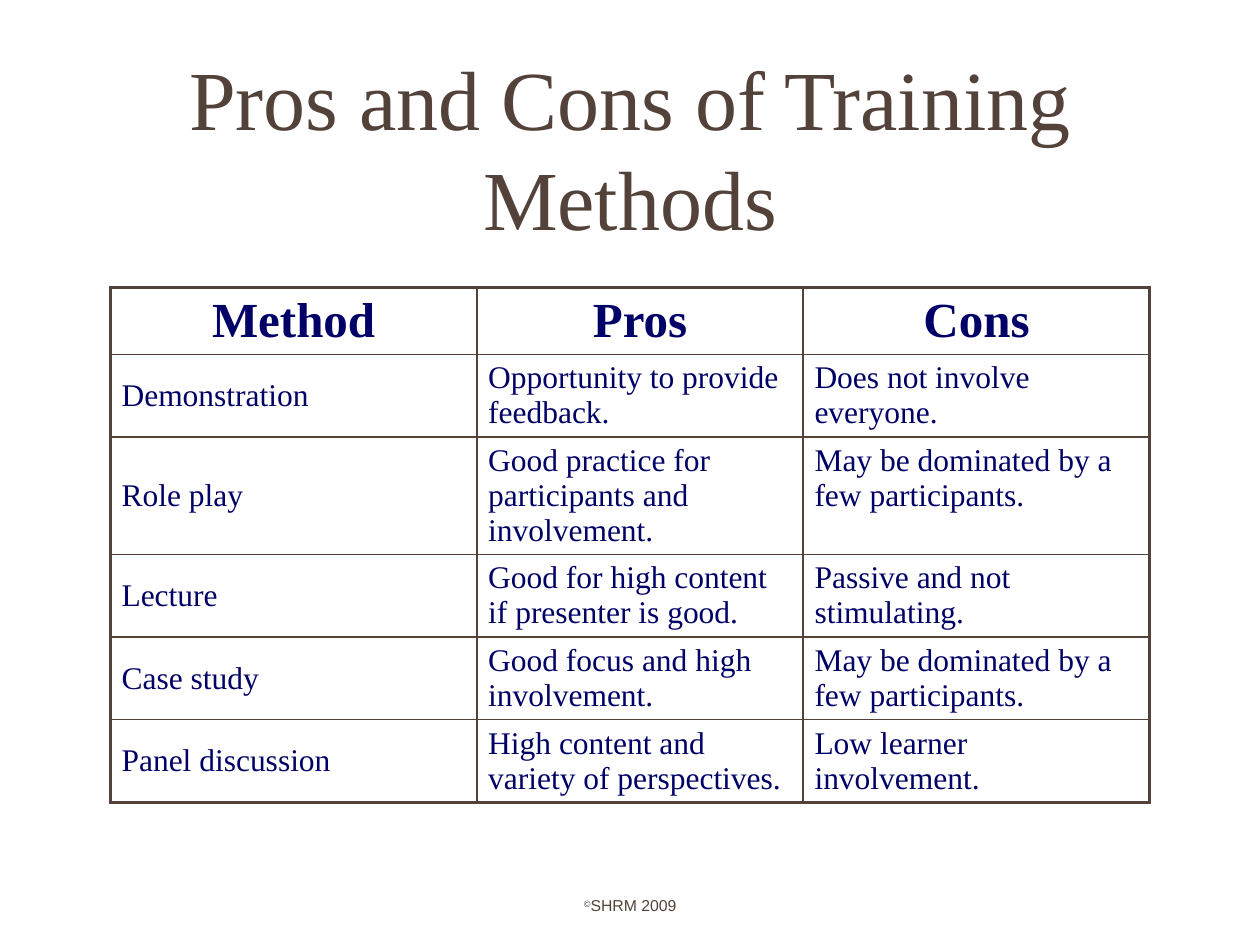
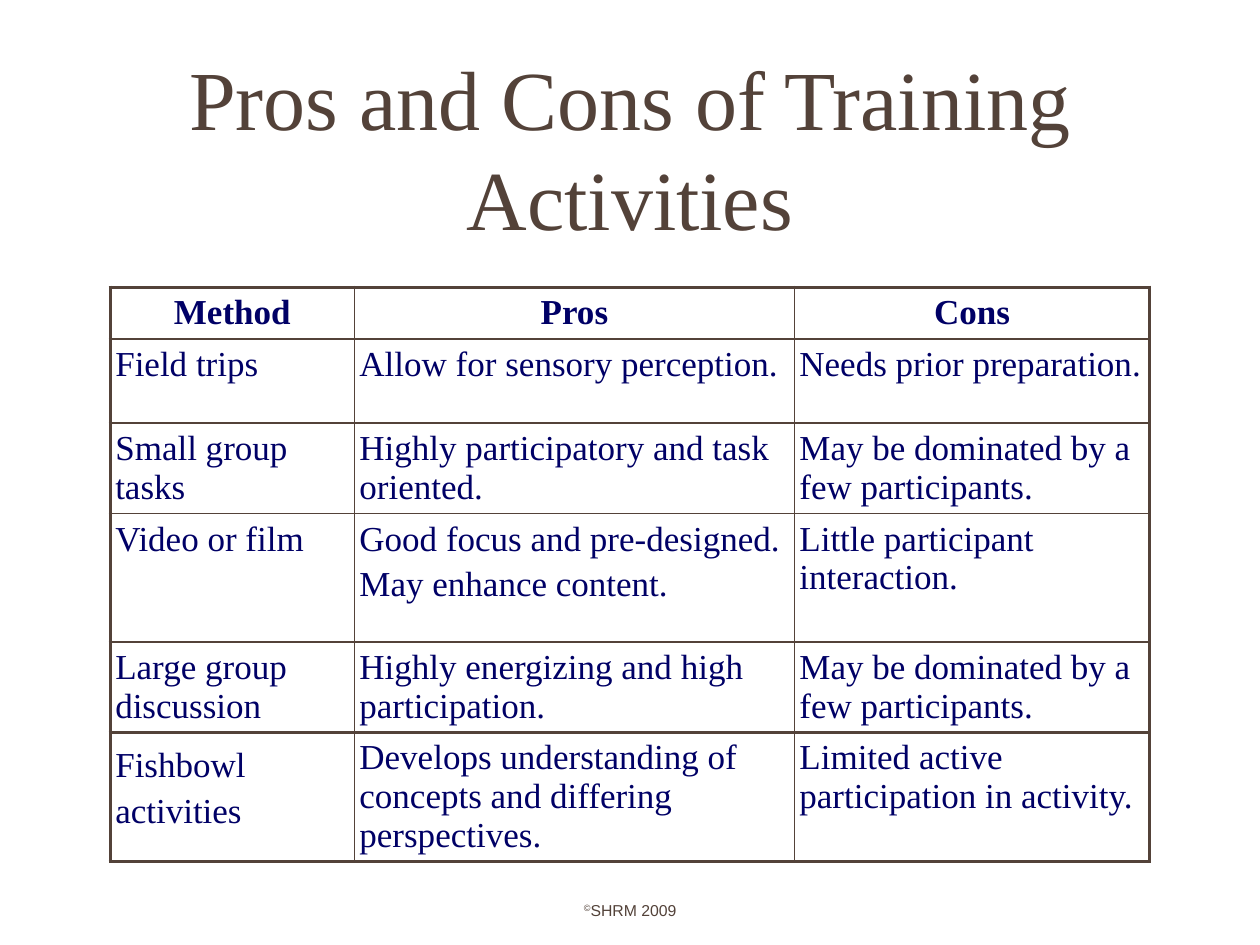
from dataclasses import dataclass

from lxml import etree
from pptx import Presentation
from pptx.dml.color import RGBColor
from pptx.enum.text import MSO_ANCHOR, PP_ALIGN
from pptx.oxml.ns import qn
from pptx.util import Inches, Pt

LEFT, CENTER = PP_ALIGN.LEFT, PP_ALIGN.CENTER
TOP, MIDDLE = MSO_ANCHOR.TOP, MSO_ANCHOR.MIDDLE


@dataclass(frozen=True)
class Theme:
    """Colours, fonts, sizes and line widths shared by the slides."""

    brown: str = "534239"
    navy: str = "000066"
    serif: str = "Times New Roman"
    sans: str = "Arial"
    title_size: int = 48
    footer_size: int = 9
    title_leading: float = 1.19
    table_leading: float = 1.11
    loose_leading: float = 1.32
    heavy_line: float = 2.25
    thin_line: float = 1
    paragraph_gap: float = 0.2


THEME = Theme()
SLIDE_WIDTH, SLIDE_HEIGHT = Inches(10), Inches(7.5)
GRID_COLUMNS, GRID_ROWS = 40, 30
CONTENT_LEFT, CONTENT_WIDTH = 3.5, 33
TABLE_TOP = 9.12
HEADINGS = ("Method", "Pros", "Cons")
DOMINATED = "May be dominated by a few participants."

METHODS = {
    "title": "Pros and Cons of Training Methods",
    "column_widths": (11.64, 10.36, 11),
    "row_heights": (2.1, 2.6, 3.72, 2.6, 2.6, 2.6),
    "rows": (
        HEADINGS,
        ("Demonstration", "Opportunity to provide feedback.", "Does not involve everyone."),
        ("Role play", "Good practice for participants and involvement.", DOMINATED),
        ("Lecture", "Good for high content if presenter is good.", "Passive and not stimulating."),
        ("Case study", "Good focus and high involvement.", DOMINATED),
        ("Panel discussion", "High content and variety of perspectives.", "Low learner involvement."),
    ),
    "heading_size": 28,
    "body_size": 18,
    "side_margin": 0.09,
    "method_anchor": MIDDLE,
    "footer_top": 28.25,
}

ACTIVITIES = {
    "title": "Pros and Cons of Training Activities",
    "column_widths": (7.75, 13.97, 11.28),
    "row_heights": (1.6, 2.68, 2.86, 4.08, 2.86, 4.08),
    "rows": (
        HEADINGS,
        ("Field trips", "Allow for sensory perception.", "Needs prior preparation."),
        ("Small group tasks", "Highly participatory and task oriented.", DOMINATED),
        ("Video or film", "Good focus and pre-designed.\nMay enhance content.",
         "Little participant interaction."),
        ("Large group discussion", "Highly energizing and high participation.", DOMINATED),
        ("Fishbowl activities", "Develops understanding of concepts and differing perspectives.",
         "Limited active participation in activity."),
    ),
    "heading_size": 20,
    "body_size": 20,
    "side_margin": 0.04,
    "method_anchor": TOP,
    "footer_top": 28.4,
    "heavy_rule": 5,
    "loose_cell": (5, 0),
}


def across(columns):
    """Turn grid columns into a length."""
    return round(SLIDE_WIDTH * columns / GRID_COLUMNS)


def down(rows):
    """Turn grid rows into a length."""
    return round(SLIDE_HEIGHT * rows / GRID_ROWS)


def write_text(frame, text, *, size, color, font=THEME.serif, bold=False,
               align=LEFT, leading=None, raised=""):
    """Write one paragraph per line, after an optional raised prefix."""
    for index, line in enumerate(text.split("\n")):
        paragraph = frame.add_paragraph() if index else frame.paragraphs[0]
        paragraph.alignment = align
        if index:
            paragraph.space_before = Pt(size * THEME.paragraph_gap)
        if leading:
            paragraph.line_spacing = Pt(size * leading)
        if raised:
            prefix = paragraph.add_run()
            prefix.text = raised
            prefix._r.get_or_add_rPr().set("baseline", "30000")
        paragraph.add_run().text = line
        for run in paragraph.runs:
            run.font.name = font
            run.font.size = Pt(size)
            run.font.bold = bold
            run.font.color.rgb = RGBColor.from_string(color)


def add_text_box(slide, left, top, width, height, text, anchor=TOP, **text_format):
    """Add a wrapping text box placed on the grid."""
    shape = slide.shapes.add_textbox(across(left), down(top), across(width), down(height))
    shape.text_frame.word_wrap = True
    shape.text_frame.vertical_anchor = anchor
    write_text(shape.text_frame, text, **text_format)


def add_title(slide, text):
    """Add the centred slide title."""
    add_text_box(slide, CONTENT_LEFT, 1.68, CONTENT_WIDTH, 6, text, anchor=MIDDLE,
                 size=THEME.title_size, color=THEME.brown, align=CENTER,
                 leading=THEME.title_leading)


def add_footer(slide, top):
    """Add the copyright line."""
    add_text_box(slide, 13.67, top, 12.67, 1.4, "SHRM 2009", raised="©",
                 size=THEME.footer_size, color=THEME.brown, font=THEME.sans, align=CENTER)


def draw_borders(cell, heavy_sides):
    """Draw the four cell borders, thicker on the heavy sides."""
    properties = cell._tc.get_or_add_tcPr()
    for side in "LRTB":
        width = THEME.heavy_line if side in heavy_sides else THEME.thin_line
        line = etree.SubElement(properties, qn(f"a:ln{side}"), w=str(Pt(width)))
        fill = etree.SubElement(line, qn("a:solidFill"))
        etree.SubElement(fill, qn("a:srgbClr"), val=THEME.brown)


def find_heavy_sides(row, column, row_count, column_count, heavy_rule):
    """Name the cell sides on the table outline or on the heavy rule."""
    heavy_rows = {0, row_count, heavy_rule}
    heavy_columns = {0, column_count}
    sides = {"L": column in heavy_columns, "R": column + 1 in heavy_columns,
             "T": row in heavy_rows, "B": row + 1 in heavy_rows}
    return {side for side, heavy in sides.items() if heavy}


def add_comparison_table(slide, content):
    """Add the table of methods with their pros and cons."""
    rows = content["rows"]
    row_count, column_count = len(rows), len(HEADINGS)
    table = slide.shapes.add_table(
        row_count, column_count, across(CONTENT_LEFT), down(TABLE_TOP),
        across(CONTENT_WIDTH), down(sum(content["row_heights"]))).table
    table.first_row = table.horz_banding = False
    for table_column, width in zip(table.columns, content["column_widths"]):
        table_column.width = across(width)
    for table_row, height in zip(table.rows, content["row_heights"]):
        table_row.height = down(height)
    for row, texts in enumerate(rows):
        heading = row == 0
        for column, text in enumerate(texts):
            cell = table.cell(row, column)
            cell.margin_left = cell.margin_right = Inches(content["side_margin"])
            cell.margin_top = cell.margin_bottom = Inches(0.05)
            cell.vertical_anchor = TOP if column else content["method_anchor"]
            draw_borders(cell, find_heavy_sides(
                row, column, row_count, column_count, content.get("heavy_rule")))
            cell.fill.background()
            loose = (row, column) == content.get("loose_cell")
            write_text(cell.text_frame, text, color=THEME.navy, bold=heading,
                       size=content["heading_size" if heading else "body_size"],
                       align=CENTER if heading else LEFT,
                       leading=THEME.loose_leading if loose else THEME.table_leading)


def add_comparison_slide(presentation, content):
    """Add a slide with title, comparison table and footer."""
    slide = presentation.slides.add_slide(presentation.slide_layouts[6])
    add_title(slide, content["title"])
    add_comparison_table(slide, content)
    add_footer(slide, content["footer_top"])


def main():
    """Build and save the presentation."""
    presentation = Presentation()
    presentation.slide_width, presentation.slide_height = SLIDE_WIDTH, SLIDE_HEIGHT
    for content in (METHODS, ACTIVITIES):
        add_comparison_slide(presentation, content)
    presentation.save("out.pptx")


if __name__ == "__main__":
    main()
